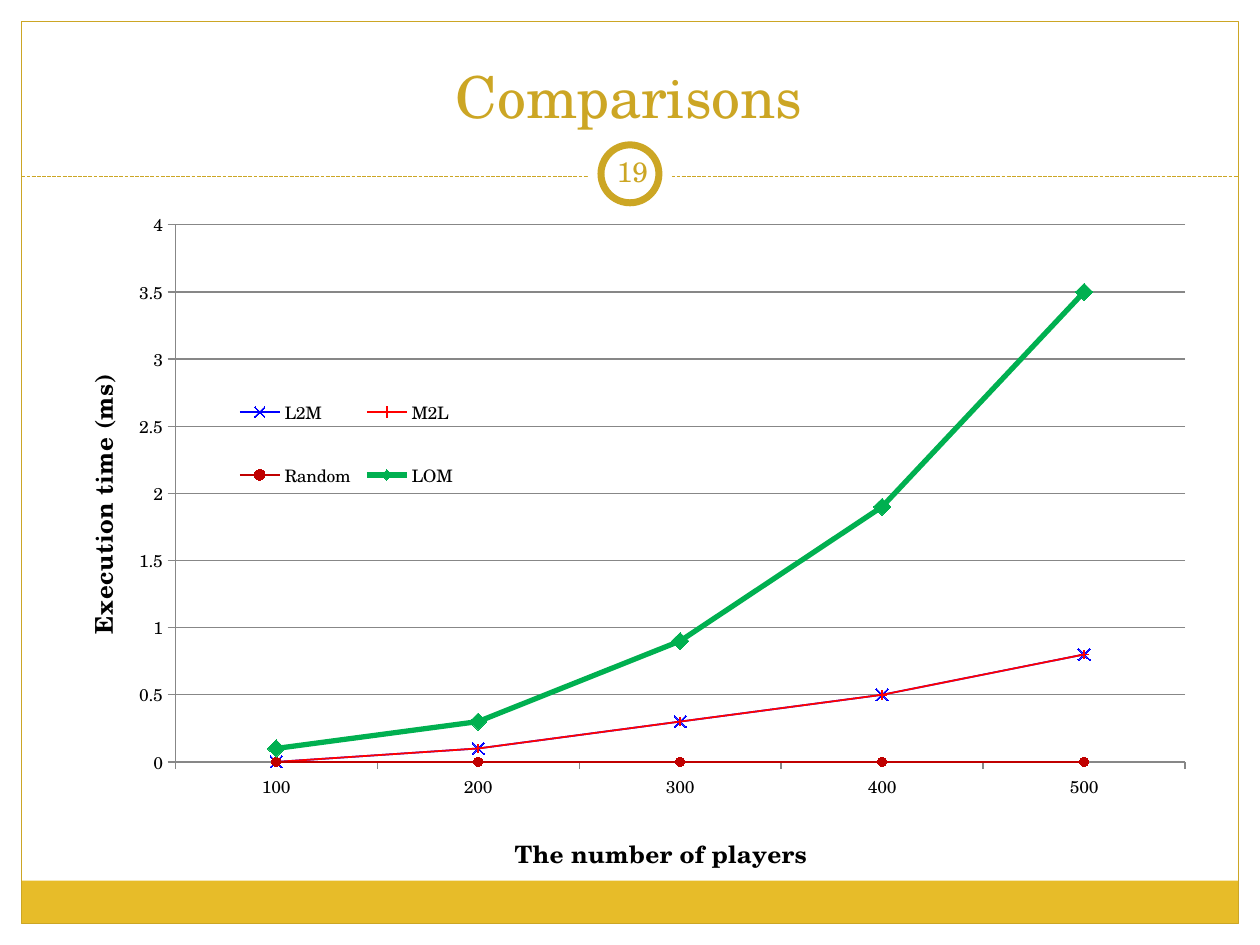
import pptx
import pptx.chart.data
import pptx.dml.color
import pptx.enum.chart
import pptx.enum.dml
import pptx.enum.shapes
import pptx.enum.text
import pptx.oxml
import pptx.oxml.ns
import pptx.util
from lxml import etree

WIDTH, HEIGHT = 10, 7.5
MARGIN = 0.17
FONT = "TeX Gyre Schola"
GOLD, BAND, WHITE, BLACK, GREY = "CCA624", "E7BC29", "FFFFFF", "000000", "878787"
RULE_Y = 1.4

MARKERS = pptx.enum.chart.XL_MARKER_STYLE
PLAYERS = ["100", "200", "300", "400", "500"]
# name, values, colour, line width, marker style, marker size
SERIES = [
    ("L2M", (0, 0.1, 0.3, 0.5, 0.8), "0000FF", 1, MARKERS.X, 7),
    ("M2L", (0, 0.1, 0.3, 0.5, 0.8), "FF0000", 1, MARKERS.PLUS, 5),
    ("Random", (0, 0, 0, 0, 0), "C00000", 1.5, MARKERS.CIRCLE, 5),
    ("LOM", (0.1, 0.3, 0.9, 1.9, 3.5), "00B050", 3, MARKERS.DIAMOND, 10),
]


def rgb(color):
    return pptx.dml.color.RGBColor.from_string(color)


def inches(*lengths):
    return [pptx.util.Inches(length) for length in lengths]


def set_line(line, color, width):
    line.color.rgb = rgb(color)
    line.width = pptx.util.Pt(width)


def set_font(font, size, color, bold=False):
    font.name, font.size, font.bold = FONT, pptx.util.Pt(size), bold
    font.color.rgb = rgb(color)


def add_shape(page, kind, box, fill=None, line=None, width=0.75):
    shape = page.shapes.add_shape(kind, *inches(*box))
    shape.shadow.inherit = False
    if fill:
        shape.fill.solid()
        shape.fill.fore_color.rgb = rgb(fill)
    else:
        shape.fill.background()
    if line:
        set_line(shape.line, line, width)
    else:
        shape.line.fill.background()


def add_text(page, box, text, size, anchor, inset_x):
    frame = page.shapes.add_textbox(*inches(*box)).text_frame
    frame.word_wrap = True
    frame.vertical_anchor = anchor
    frame.margin_left = frame.margin_right = pptx.util.Inches(inset_x)
    frame.text = text
    paragraph = frame.paragraphs[0]
    paragraph.alignment = pptx.enum.text.PP_ALIGN.CENTER
    set_font(paragraph.runs[0].font, size, GOLD)


def add_frame(page, box):
    """Gold border, bottom band and dashed rule under the title."""
    left, top, width, height = box
    rectangle = pptx.enum.shapes.MSO_SHAPE.RECTANGLE
    band = 0.34
    add_shape(page, rectangle, (left, top + height - band, width, band), BAND)
    add_shape(page, rectangle, box, line=GOLD)
    rule = page.shapes.add_connector(
        pptx.enum.shapes.MSO_CONNECTOR.STRAIGHT,
        *inches(left, RULE_Y, left + width, RULE_Y))
    set_line(rule.line, GOLD, 0.75)
    rule.line.dash_style = pptx.enum.dml.MSO_LINE.SQUARE_DOT
    etree.SubElement(rule._element.spPr, pptx.oxml.ns.qn("a:effectLst"))


def add_number_badge(page, center_x, center_y, number):
    oval = pptx.enum.shapes.MSO_SHAPE.OVAL
    for size, line in ((0.67, None), (0.46, GOLD)):
        box = (center_x - size / 2, center_y - size / 2, size, size)
        add_shape(page, oval, box, WHITE, line, 4)
    add_text(page, (center_x - 0.23, center_y - 0.26, 0.5, 0.48), number, 16,
             pptx.enum.text.MSO_ANCHOR.MIDDLE, 0.05)


def set_layout(element, index, inner=False, **shares):
    """Place a chart part by shares (x, y, w, h) of the chart's size."""
    qn = pptx.oxml.ns.qn
    for old in element.findall(qn("c:layout")):
        element.remove(old)
    layout = pptx.oxml.parse_xml(
        "<c:layout %s><c:manualLayout/></c:layout>" % pptx.oxml.ns.nsdecls("c"))
    settings = [("layoutTarget", "inner")] if inner else []
    settings += [("xMode", "edge"), ("yMode", "edge")]
    settings += [(key, str(share)) for key, share in shares.items()]
    for name, value in settings:
        etree.SubElement(layout[0], qn("c:" + name)).set("val", value)
    element.insert(index, layout)


def style_axis(axis, title, x, y):
    axis.major_tick_mark = pptx.enum.chart.XL_TICK_MARK.OUTSIDE
    axis.minor_tick_mark = pptx.enum.chart.XL_TICK_MARK.NONE
    set_font(axis.tick_labels.font, 10, BLACK)
    set_line(axis.format.line, GREY, 0.75)
    frame = axis.axis_title.text_frame
    frame.text = title
    set_font(frame.paragraphs[0].runs[0].font, 14, BLACK, bold=True)
    set_layout(axis.axis_title._element, 1, x=x, y=y)


def add_time_chart(page, box):
    data = pptx.chart.data.CategoryChartData()
    data.categories = PLAYERS
    for name, values, *_ in SERIES:
        data.add_series(name, values)
    chart = page.shapes.add_chart(
        pptx.enum.chart.XL_CHART_TYPE.LINE_MARKERS, *inches(*box), data).chart
    chart.has_title = False
    set_font(chart.font, 10, BLACK)
    set_layout(chart._chartSpace.chart.plotArea, 0, inner=True,
               x=0.114, y=0.022, w=0.862, h=0.818)

    style_axis(chart.category_axis, "The number of players", 0.4, 0.94)
    style_axis(chart.value_axis, "Execution time (ms)", 0.03, 0.25)
    scale = chart.value_axis
    scale.minimum_scale, scale.maximum_scale, scale.major_unit = 0, 4, 0.5
    scale.tick_labels.number_format = "General"
    scale.tick_labels.number_format_is_linked = False
    scale.has_major_gridlines = True
    set_line(scale.major_gridlines.format.line, GREY, 0.75)

    chart.has_legend = True
    chart.legend.position = pptx.enum.chart.XL_LEGEND_POSITION.RIGHT
    chart.legend.include_in_layout = False
    set_font(chart.legend.font, 10, BLACK)
    set_layout(chart.legend._element, 1, x=0.16, y=0.23, w=0.2, h=0.25)

    for series, (_, _, color, width, style, size) in zip(chart.plots[0].series, SERIES):
        series.smooth = False
        set_line(series.format.line, color, width)
        marker = series.marker
        marker.style, marker.size = style, size
        marker.format.fill.solid()
        marker.format.fill.fore_color.rgb = rgb(color)
        set_line(marker.format.line, color, 0.75)


def main():
    deck = pptx.Presentation()
    deck.slide_width, deck.slide_height = inches(WIDTH, HEIGHT)
    page = deck.slides.add_slide(deck.slide_layouts[6])
    page.background.fill.solid()
    page.background.fill.fore_color.rgb = rgb(WHITE)

    add_frame(page, (MARGIN, MARGIN, WIDTH - 2 * MARGIN, HEIGHT - 2 * MARGIN))
    add_text(page, (0.33, 0.25, 9.33, 0.83), "Comparisons", 33,
             pptx.enum.text.MSO_ANCHOR.BOTTOM, 0.1)
    add_time_chart(page, (0.33, 1.67, 9.3, 5.31))
    add_number_badge(page, WIDTH / 2, 1.38, "19")
    deck.save("out.pptx")


if __name__ == "__main__":
    main()
